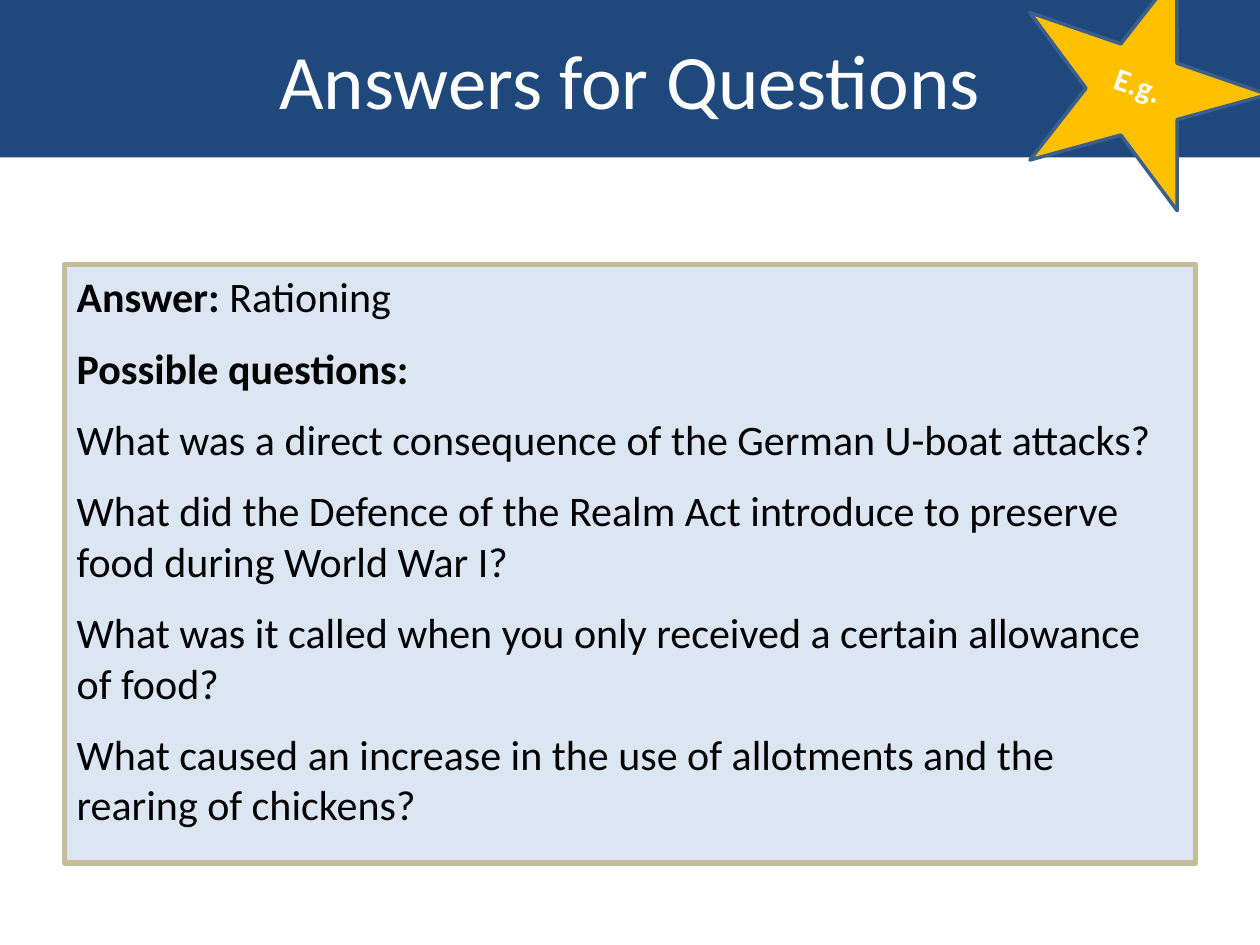
"""Build the "Answers for Questions" example slide."""
from pptx import Presentation
from pptx.dml.color import RGBColor
from pptx.enum.shapes import MSO_SHAPE as Shape
from pptx.enum.text import MSO_ANCHOR as Anchor, PP_ALIGN as Align
from pptx.util import Inches, Pt

NAVY, GOLD, PALE, TAN = "1F497D", "FFC000", "DCE6F2", "C4BD97"
BLACK, WHITE, STAR_EDGE = "000000", "FFFFFF", "3A5F8C"

ANSWER = [
    [("Answer: ", True), ("Rationing", False)],
    [("Possible questions:", True)],
]
QUESTIONS = [
    "What was a direct consequence of the German U-boat attacks?",
    "What did the Defence of the Realm Act introduce to preserve food during World War I?",
    "What was it called when you only received a certain allowance of food?",
    "What caused an increase in the use of allotments and the rearing of chickens?",
]


def color(hex_value):
    return RGBColor.from_string(hex_value)


def apply(target, values):
    for name, value in values.items():
        setattr(target, name, value)


class SlideBuilder:
    """Holds the text style and the slide being filled."""

    font = "Calibri"

    def __init__(self, page):
        self.page = page

    def place(self, shape, bounds):
        names = ("left", "top", "width", "height")
        apply(shape, dict(zip(names, map(Inches, bounds))))

    def paint(self, shape, fill):
        shape.fill.solid()
        shape.fill.fore_color.rgb = color(fill)

    def add_text(self, shape, paragraphs, size, ink, frame, layout):
        apply(shape.text_frame, {"word_wrap": True, **frame})
        for index, spans in enumerate(paragraphs):
            para = shape.text_frame.add_paragraph() if index else shape.text_frame.paragraphs[0]
            apply(para, layout)
            for text, bold in spans:
                span = para.add_run()
                span.text = text
                apply(span.font, {"name": self.font, "size": Pt(size), "bold": bold})
                span.font.color.rgb = color(ink)

    def title(self, text, bounds, fill):
        banner = self.page.shapes.title
        self.place(banner, bounds)
        self.paint(banner, fill)
        self.add_text(banner, [[(text, False)]], 44, WHITE,
                      {"vertical_anchor": Anchor.MIDDLE}, {"alignment": Align.CENTER})

    def shape(self, kind, bounds, fill, edge=None, weight=0, rotation=0, parent=None):
        box = (parent or self.page).shapes.add_shape(kind, *map(Inches, bounds))
        apply(box, {"rotation": rotation})
        box.shadow.inherit = False
        self.paint(box, fill)
        if edge:
            box.line.color.rgb = color(edge)
            box.line.width = Pt(weight)
        else:
            box.line.fill.background()
        return box

    def panel(self, paragraphs, bounds):
        box = self.shape(Shape.RECTANGLE, bounds, PALE, TAN, 3)
        self.add_text(box, paragraphs, 24, BLACK, {"vertical_anchor": Anchor.TOP},
                      {"alignment": Align.LEFT, "space_after": Pt(12)})

    def badge(self, text, star_bounds, label_bounds, rotation):
        group = self.page.shapes.add_group_shape()
        self.shape(Shape.STAR_5_POINT, star_bounds, GOLD, STAR_EDGE, 2, rotation, group)
        label = self.shape(Shape.RECTANGLE, label_bounds, GOLD, rotation=rotation, parent=group)
        self.add_text(label, [[(text, True)]], 18, WHITE,
                      {"vertical_anchor": Anchor.TOP, "margin_left": 0},
                      {"alignment": Align.RIGHT})


def main():
    deck = Presentation()
    apply(deck, {"slide_width": Inches(10), "slide_height": Inches(7.5)})
    builder = SlideBuilder(deck.slides.add_slide(deck.slide_layouts[5]))
    builder.title("Answers for Questions", (0, 0, 10, 1.25), NAVY)
    builder.panel(ANSWER + [[(question, False)] for question in QUESTIONS],
                  (0.51, 2.1, 8.98, 4.75))
    builder.badge("E.g.", (8.05, -0.27, 2, 1.79), (8.74, 0.47, 0.58, 0.41), 19)
    deck.save("out.pptx")


if __name__ == "__main__":
    main()
